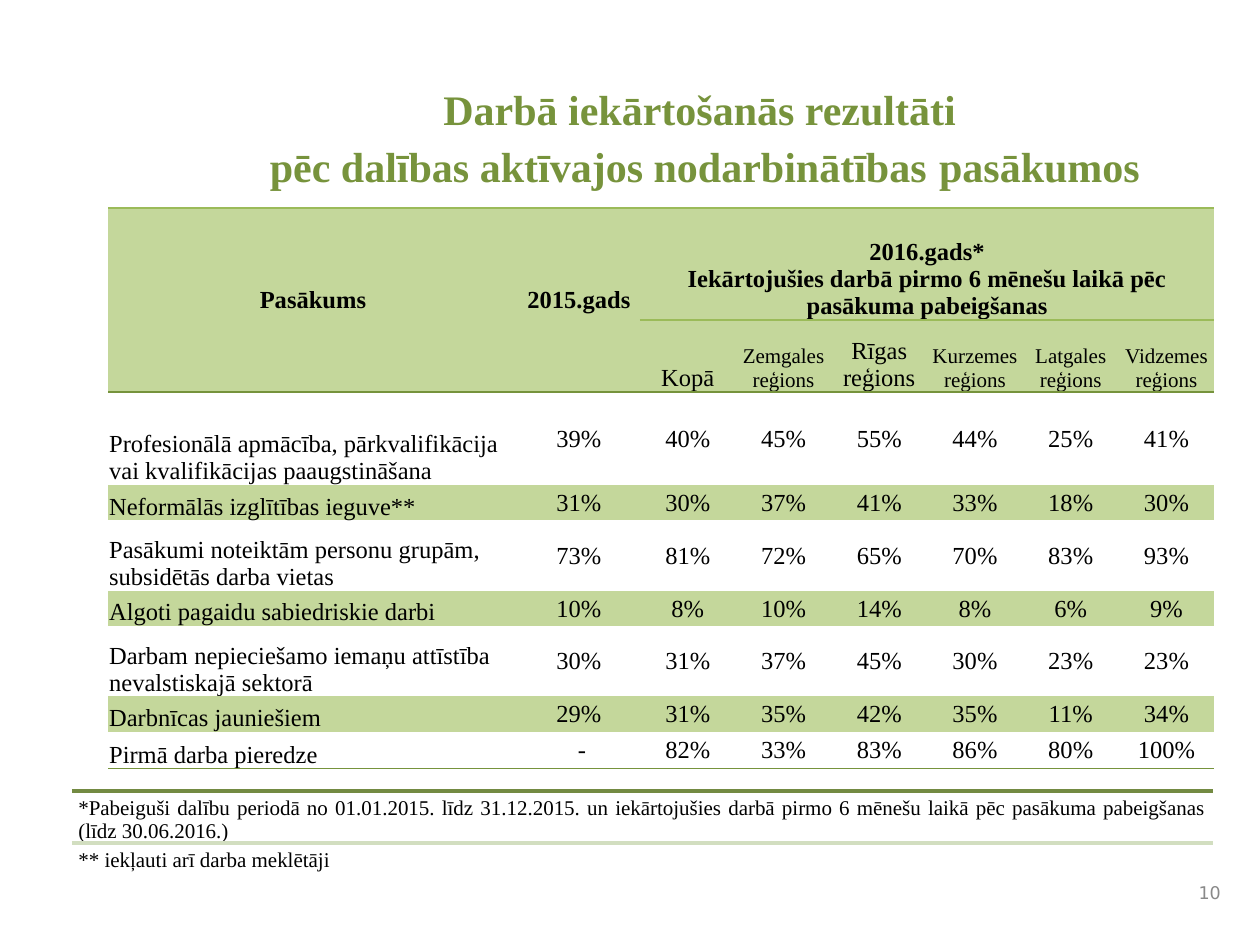
"""Build the slide on job placement results after active employment measures."""
from copy import deepcopy

from lxml import etree
from pptx import Presentation
from pptx import util as u
from pptx.dml.color import RGBColor
from pptx.enum import shapes, text
from pptx.oxml.ns import qn

COLORS = {"title": "77933C", "ink": "000000", "page": "898989", "band": "C4D79B",
          "edge": "9BBB59", "rule": "76933C", "dark": "738A42", "pale": "D2DEC0"}
SERIF = "Times New Roman"
CENTER, LEFT, RIGHT, JUSTIFY = (text.PP_ALIGN.CENTER, text.PP_ALIGN.LEFT,
                                text.PP_ALIGN.RIGHT, text.PP_ALIGN.JUSTIFY)
TOP, MIDDLE, BOTTOM = (text.MSO_ANCHOR.TOP, text.MSO_ANCHOR.MIDDLE, text.MSO_ANCHOR.BOTTOM)

TITLE = [[("Darbā iekārtošanās rezultāti ", 24)],
         [("pēc dalības aktīvajos nodarbinātības", 24), (" ", 28), ("pasākumos", 24)]]
PERIOD = "2016.gads*\vIekārtojušies darbā pirmo 6 mēnešu laikā pēc pasākuma pabeigšanas"
REGIONS = [("Kopā", 14), ("Zemgales reģions", 12), ("Rīgas reģions", 14),
           ("Kurzemes reģions", 12), ("Latgales reģions", 12), ("Vidzemes reģions", 12)]
MEASURES = [
    ("Profesionālā apmācība, pārkvalifikācija vai kvalifikācijas paaugstināšana",
     "39%", "40%", "45%", "55%", "44%", "25%", "41%"),
    ("Neformālās izglītības ieguve**", "31%", "30%", "37%", "41%", "33%", "18%", "30%"),
    ("Pasākumi noteiktām personu grupām, subsidētās darba vietas",
     "73%", "81%", "72%", "65%", "70%", "83%", "93%"),
    ("Algoti pagaidu sabiedriskie darbi", "10%", "8%", "10%", "14%", "8%", "6%", "9%"),
    ("Darbam nepieciešamo iemaņu attīstība nevalstiskajā sektorā",
     "30%", "31%", "37%", "45%", "30%", "23%", "23%"),
    ("Darbnīcas jauniešiem", "29%", "31%", "35%", "42%", "35%", "11%", "34%"),
    ("Pirmā darba pieredze", " -", "82%", "33%", "83%", "86%", "80%", "100%"),
]
NOTES = [
    ("*Pabeiguši dalību periodā no 01.01.2015. līdz 31.12.2015. un iekārtojušies darbā "
     "pirmo 6 mēnešu laikā pēc pasākuma pabeigšanas (līdz 30.06.2016.)", JUSTIFY, "dark"),
    ("** iekļauti arī darba meklētāji", LEFT, "pale"),
]
COLUMN_WIDTHS = [8.26, 2.46] + [1.93] * 6
ROW_HEIGHTS = [2.26, 1.45, 1.88, 0.71, 1.42, 0.71, 1.42, 0.71, 0.74]


def write(frame, paragraphs, size=14, color="ink", font=SERIF, bold=False,
          align=CENTER, spacing=None):
    """Fill a text frame with paragraphs, each a string or a list of (text, size) runs."""
    if isinstance(paragraphs, str):
        paragraphs = [paragraphs]
    frame.word_wrap = True
    for index, content in enumerate(paragraphs):
        paragraph = frame.add_paragraph() if index else frame.paragraphs[0]
        paragraph.alignment = align
        if spacing:
            paragraph.line_spacing = spacing
        if isinstance(content, str):
            paragraph.text = content
            sizes = [size] * len(paragraph.runs)
        else:
            for words, _ in content:
                paragraph.add_run().text = words
            sizes = [points for _, points in content]
        for run, points in zip(paragraph.runs, sizes):
            run.font.size, run.font.name, run.font.bold = u.Pt(points), font, bold
            run.font.color.rgb = RGBColor.from_string(COLORS[color])
        for line_break in paragraph._p.findall(qn("a:br")):
            line_break.append(deepcopy(paragraph.runs[0]._r.rPr))


def add_box(slide, left, top, width, height, paragraphs, inset=0.0, anchor=TOP, **style):
    frame = slide.shapes.add_textbox(*map(u.Cm, (left, top, width, height))).text_frame
    frame.margin_left = frame.margin_right = u.Cm(inset)
    frame.margin_top = frame.margin_bottom = u.Cm(inset)
    frame.vertical_anchor = anchor
    write(frame, paragraphs, **style)


def add_rule(slide, left, top, width, color):
    rule = slide.shapes.add_connector(shapes.MSO_CONNECTOR.STRAIGHT, u.Cm(left), u.Cm(top),
                                      u.Cm(left + width), u.Cm(top))
    rule.line.color.rgb = RGBColor.from_string(COLORS[color])
    rule.line.width = u.Pt(2)
    etree.SubElement(rule._element.spPr, qn("a:effectLst"))


def style_cell(cell, top=None, bottom=None, banded=False):
    cell.margin_left = cell.margin_right = cell.margin_top = u.Cm(0.02)
    cell.margin_bottom = 0
    properties = cell._tc.get_or_add_tcPr()
    for side, color in (("L", None), ("R", None), ("T", top), ("B", bottom)):
        edge = etree.SubElement(properties, qn("a:ln" + side), w=str(u.Pt(1)))
        fill = etree.SubElement(edge, qn("a:solidFill" if color else "a:noFill"))
        if color:
            etree.SubElement(fill, qn("a:srgbClr"), val=COLORS[color])
    if banded:
        cell.fill.solid()
        cell.fill.fore_color.rgb = RGBColor.from_string(COLORS["band"])
    else:
        cell.fill.background()


def add_results(slide, left, top):
    table = slide.shapes.add_table(len(ROW_HEIGHTS), len(COLUMN_WIDTHS), u.Cm(left), u.Cm(top),
                                   u.Cm(sum(COLUMN_WIDTHS)), u.Cm(sum(ROW_HEIGHTS))).table
    table.first_row = table.horz_banding = False
    for column, width in zip(table.columns, COLUMN_WIDTHS):
        column.width = u.Cm(width)
    for row, height in zip(table.rows, ROW_HEIGHTS):
        row.height = u.Cm(height)

    last = len(ROW_HEIGHTS) - 1
    tops = {0: "edge", 1: "edge", 2: "rule"}
    bottoms = {0: "edge", 1: "rule", last: "rule"}
    for r in range(last + 1):
        for c in range(len(COLUMN_WIDTHS)):
            tall = r < 2 and c < 2
            style_cell(table.cell(r, c), None if tall and r else tops.get(r),
                       "rule" if tall else bottoms.get(r), r < 2 or r % 2 == 1)

    headings = [(0, 0, 1, 0, "Pasākums", MIDDLE), (0, 1, 1, 1, "2015.gads", MIDDLE),
                (0, 2, 0, 7, PERIOD, BOTTOM)]
    for r, c, end_row, end_column, heading, anchor in headings:
        cell = table.cell(r, c)
        cell.merge(table.cell(end_row, end_column))
        cell.vertical_anchor = anchor
        write(cell.text_frame, heading, bold=True)
    for c, (region, size) in enumerate(REGIONS, 2):
        cell = table.cell(1, c)
        cell.vertical_anchor = BOTTOM
        write(cell.text_frame, region, size=size)
    for r, measure in enumerate(MEASURES, 2):
        for c, value in enumerate(measure):
            cell = table.cell(r, c)
            cell.vertical_anchor = MIDDLE if c else BOTTOM
            write(cell.text_frame, value, align=CENTER if c else LEFT)


def main():
    deck = Presentation()
    deck.slide_width, deck.slide_height = u.Cm(25.4), u.Cm(19.05)
    slide = deck.slides.add_slide(deck.slide_layouts[6])
    add_box(slide, 23.7, 17.58, 1.04, 0.84, "10", inset=0.13, anchor=MIDDLE,
            size=10, color="page", font="DejaVu Sans", align=RIGHT)
    add_box(slide, 4.47, 1.68, 19.48, 2.11, TITLE, color="title", bold=True)
    for index, (note, align, color) in enumerate(NOTES):
        note_top = 15.95 + 1.04 * index
        add_rule(slide, 1.45, note_top, 23.01, color)
        add_box(slide, 1.45, note_top, 23.01, 1.02, note, inset=0.13,
                size=12, align=align, spacing=0.9)
    add_results(slide, 2.18, 4.19)
    deck.save("out.pptx")


if __name__ == "__main__":
    main()
